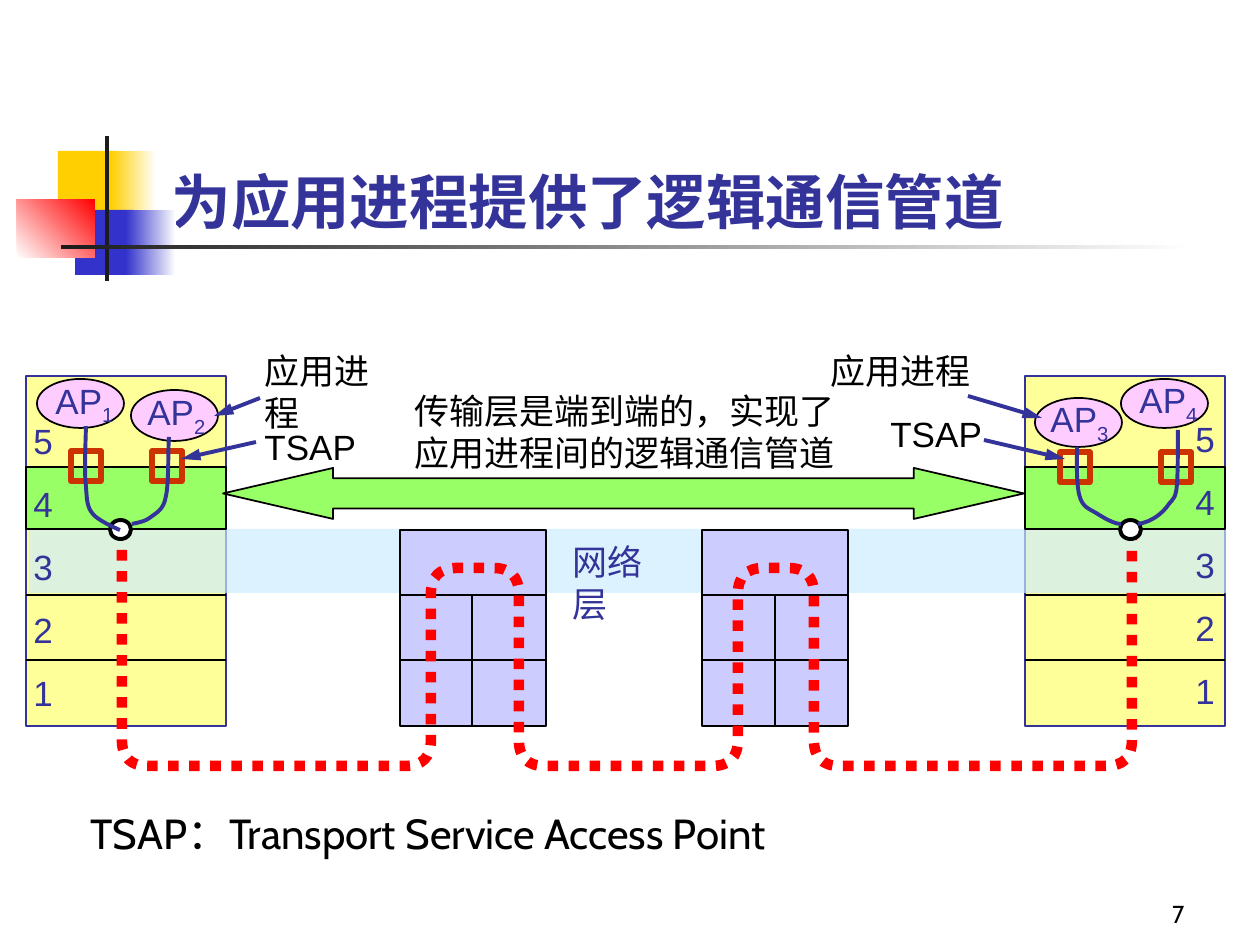
from lxml import etree
from pptx import Presentation
from pptx.dml.color import RGBColor
from pptx.enum.dml import MSO_LINE
from pptx.enum.shapes import MSO_CONNECTOR, MSO_SHAPE
from pptx.enum.text import MSO_ANCHOR, PP_ALIGN
from pptx.oxml.ns import qn
from pptx.util import Pt

PX = 914400 / 126
RECT, OVAL = MSO_SHAPE.RECTANGLE, MSO_SHAPE.OVAL
DOUBLE_ARROW = MSO_SHAPE.LEFT_RIGHT_ARROW
STRAIGHT = MSO_CONNECTOR.STRAIGHT
DOTTED = MSO_LINE.ROUND_DOT
BOTTOM, RIGHT, LEFT = MSO_ANCHOR.BOTTOM, PP_ALIGN.RIGHT, PP_ALIGN.LEFT
NAVY, BLACK, WHITE = "333399", "000000", "FFFFFF"
YELLOW, GREEN, LILAC, PINK = "FFFF99", "99FF66", "CCCCFF", "FFCCFF"

TITLE = "为应用进程提供了逻辑通信管道"
# box, fill colour or (start, end) colours, gradient angle
ORNAMENT = [
    ((58, 151, 60, 66), "FFCF01", 0),
    ((111, 151, 45, 66), ("FFCF01", WHITE), 0),
    ((75, 210, 58, 65), "3333CC", 0),
    ((126, 210, 50, 65), ("3333CC", WHITE), 0),
    ((17, 199, 78, 59), (WHITE, "FF0000"), 45),
    ((105, 136, 4, 145), "1C1C1C", 0),
    ((61, 245, 1134, 4), ("1C1C1C", WHITE), 0),
]
LAYERS = ["5", "4", "3", "2", "1"]
HOST_WIDTH, ROUTER_WIDTH = 200, 146
HOSTS = [(26, (21, 392)), (1025, (1183, 390))]  # left edge, layer number corner
ROUTERS = [(400, 472), (702, 775)]  # left edge, divider
NETWORK_TOP, SEPARATORS, STACK_BOTTOM = 530, (595, 660), 726
# ellipse, label corner, subscript
PROCESSES = [
    ((37, 379, 87, 49), (43, 373), "1"),
    ((131, 390, 87, 51), (135, 384), "2"),
    ((1035, 398, 87, 49), (1038, 391), "3"),
    ((1121, 379, 87, 49), (1127, 372), "4"),
]
PORTS = [(71, 451), (152, 451), (1060, 452), (1161, 452)]
JOINTS = [110, 1120]
# start, then three points for each cubic curve
PROCESS_LINKS = [
    [(86, 426), (86, 436), (84, 471), (86, 486), (87, 500), (87, 507),
     (93, 514), (98, 520), (113, 527), (120, 530)],
    [(169, 437), (168, 447), (169, 484), (166, 496), (164, 510), (156, 513),
     (151, 517), (145, 522), (136, 523), (132, 524)],
    [(1077, 447), (1077, 455), (1076, 480), (1079, 494), (1082, 508),
     (1090, 509), (1096, 513), (1104, 518), (1114, 524), (1121, 524)],
    [(1178, 430), (1178, 438), (1178, 474), (1177, 485), (1176, 498),
     (1173, 499), (1169, 504), (1163, 513), (1152, 522), (1138, 524)],
]
ROUTE = [(122, 529), (122, 766), (431, 766), (431, 568), (519, 568),
         (519, 766), (738, 766), (738, 568), (814, 568), (814, 766),
         (1132, 766), (1132, 529)]
POINTERS = [
    ((260, 398), (214, 416)), ((968, 396), (1042, 418)),
    ((984, 440), (1065, 459)), ((256, 442), (181, 459)),
]
# text, box, colour, wraps
CAPTIONS = [
    ("传输层是端到端的，实现了应用进程间的逻辑通信管道", (402, 383, 466, 96), BLACK, True),
    ("应用进程", (252, 343, 162, 54), BLACK, True),
    ("应用进程", (818, 343, 172, 54), BLACK, True),
    ("网络层", (560, 534, 129, 54), NAVY, True),
    ("TSAP", (252, 419, 117, 54), BLACK, False),
    ("TSAP", (878, 406, 117, 54), BLACK, False),
]
LEGEND = "TSAP：Transport Service Access Point"


def rgb(colour):
    return RGBColor.from_string(colour)


def emu(*lengths):
    return [round(length * PX) for length in lengths]


def add_block(kind, box, fill=None, line=None, weight=1, angle=0, parent=None):
    block = (parent or slide).shapes.add_shape(kind, *emu(*box))
    block.shadow.inherit = False
    if fill is None:
        block.fill.background()
    elif isinstance(fill, tuple):
        block.fill.gradient()
        block.fill.gradient_angle = angle
        for stop, colour in zip(block.fill.gradient_stops, fill):
            stop.color.rgb = rgb(colour)
    else:
        block.fill.solid()
        block.fill.fore_color.rgb = rgb(fill)
    if line:
        block.line.color.rgb = rgb(line)
        block.line.width = Pt(weight)
    else:
        block.line.fill.background()
    return block


def add_line(start, end, colour=BLACK, weight=1, arrow=False, parent=None):
    line = (parent or slide).shapes.add_connector(STRAIGHT, *emu(*start, *end))
    line.line.color.rgb = rgb(colour)
    line.line.width = Pt(weight)
    properties = line._element.spPr
    if arrow:
        etree.SubElement(properties.find(qn("a:ln")), qn("a:tailEnd"),
                         type="triangle", w="med", len="lg")
    etree.SubElement(properties, qn("a:effectLst"))


def add_separators(left, width, parent=None):
    for y in SEPARATORS:
        add_line((left, y), (left + width, y), parent=parent)


def add_text(paragraphs, box, colour=BLACK, size=20, font="Arial", wrap=False):
    frame = slide.shapes.add_textbox(*emu(*box)).text_frame
    frame.word_wrap = wrap
    frame.text = "\n".join(paragraphs)
    for paragraph in frame.paragraphs:
        set_font(paragraph, colour, size, font)
    return frame


def set_font(paragraph, colour, size, font):
    paragraph.font.name = font
    paragraph.font.size = Pt(size)
    paragraph.font.color.rgb = rgb(colour)


def toward(origin, target, distance):
    """The point at a distance from origin along an upright or level leg."""
    return tuple(a + max(-distance, min(distance, b - a)) for a, b in zip(origin, target))


def round_corners(points, radius=26):
    """Segments of one point (line) or three points (cubic curve)."""
    segments = []
    for before, corner, after in zip(points, points[1:], points[2:]):
        segments.append([toward(corner, before, radius)])
        segments.append([toward(corner, before, radius / 3),
                         toward(corner, after, radius / 3),
                         toward(corner, after, radius)])
    return segments + [[points[-1]]]


def add_curve(start, segments, colour, weight):
    builder = slide.shapes.build_freeform(*emu(*start))
    builder.add_line_segments([emu(*point) for segment in segments for point in segment],
                              close=False)
    curve = builder.convert_to_shape()
    legs = iter(curve._element.findall(".//" + qn("a:lnTo")))
    for segment in segments:
        leg = next(legs)
        if len(segment) == 3:
            leg.tag = qn("a:cubicBezTo")
            for _ in range(2):
                extra = next(legs)
                leg.append(extra[0])
                extra.getparent().remove(extra)
    curve.shadow.inherit = False
    curve.fill.background()
    curve.line.color.rgb = rgb(colour)
    curve.line.width = Pt(weight)
    return curve


prs = Presentation()
prs.slide_width, prs.slide_height = emu(1260, 945)
slide = prs.slides.add_slide(prs.slide_layouts[5])

for box, fill, angle in ORNAMENT:
    add_block(RECT, box, fill, angle=angle)

title = slide.shapes.title
title.left, title.top, title.width, title.height = emu(159, 86, 1073, 157)
title.text_frame.text = TITLE
title.text_frame.vertical_anchor = BOTTOM
heading = title.text_frame.paragraphs[0]
heading.alignment = LEFT
heading.font.bold = True
set_font(heading, NAVY, 34, "Cabin")

for left, _ in HOSTS:
    add_block(RECT, (left, 376, HOST_WIDTH, STACK_BOTTOM - 376), YELLOW, NAVY)
band = add_block(RECT, (29, 529, 1197, 64), "CCECFF")
band_colour = band._element.spPr.find(".//" + qn("a:srgbClr"))
etree.SubElement(band_colour, qn("a:alpha"), val="68000")

for left, number_corner in HOSTS:
    add_separators(left, HOST_WIDTH)
    add_block(RECT, (left, 467, HOST_WIDTH, 62), GREEN, BLACK, 1.5)
    for number in add_text(LAYERS, (*number_corner, 44, 328), NAVY).paragraphs:
        number.line_spacing = 1.5

for left, divider in ROUTERS:
    router = slide.shapes.add_group_shape()
    add_block(RECT, (left, NETWORK_TOP, ROUTER_WIDTH, STACK_BOTTOM - NETWORK_TOP),
              LILAC, BLACK, parent=router)
    add_separators(left, ROUTER_WIDTH, router)
    add_line((divider, SEPARATORS[0]), (divider, STACK_BOTTOM))

add_curve(ROUTE[0], round_corners(ROUTE), "FF0000", 6).line.dash_style = DOTTED
pipe = add_block(DOUBLE_ARROW, (223, 468, 801, 51), GREEN, BLACK)
pipe.adjustments[0], pipe.adjustments[1] = 0.59, 2.16

for ellipse, corner, subscript in PROCESSES:
    add_block(OVAL, ellipse, PINK, BLACK)
    label = add_text(["AP"], (*corner, 84, 54), NAVY).paragraphs[0]
    index = label.add_run()
    index.text = subscript
    index._r.get_or_add_rPr().set("baseline", "-25000")
for left in JOINTS:
    add_block(OVAL, (left, 520, 21, 19), WHITE, BLACK, 2.25)
for corner in PORTS:
    add_block(RECT, (*corner, 30, 30), line="CC3300", weight=3)
for start, *controls in PROCESS_LINKS:
    bends = [controls[first:first + 3] for first in range(0, len(controls), 3)]
    add_curve(start, bends, NAVY, 2.25)

for start, end in POINTERS:
    add_line(start, end, NAVY, 2.25, arrow=True)
for caption, box, colour, wrap in CAPTIONS:
    add_text([caption], box, colour, wrap=wrap)
add_text([LEGEND], (78, 801, 871, 63), size=24, font="Cabin", wrap=True)
page = add_text(["7"], (935, 872, 262, 63), size=14, font="Cabin", wrap=True)
page.vertical_anchor = BOTTOM
page.paragraphs[0].alignment = RIGHT

prs.save("out.pptx")
